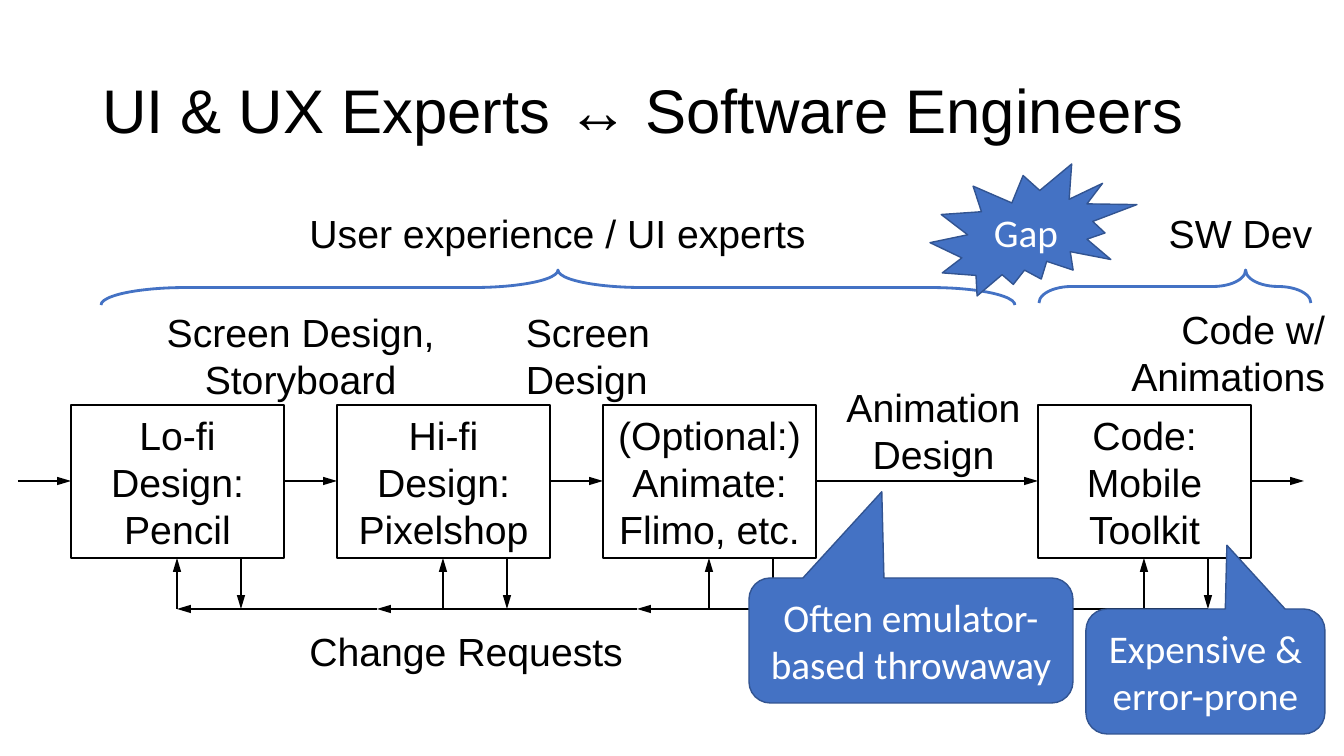
from dataclasses import dataclass

from pptx import Presentation
from pptx.dml.color import RGBColor
from pptx.enum.shapes import MSO_CONNECTOR, MSO_SHAPE
from pptx.enum.text import MSO_ANCHOR, MSO_AUTO_SIZE, PP_ALIGN
from pptx.oxml.ns import qn
from pptx.util import Emu, Pt
from lxml.etree import SubElement


@dataclass(frozen=True)
class Theme:
    ink: str = "000000"
    paper: str = "FFFFFF"
    accent: str = "4472C4"
    accent_edge: str = "325491"
    font: str = "Arial"
    callout_font: str = "Calibri"
    title_size: int = 44
    text_size: int = 28
    edge: float = 1
    arrow: float = 1.5
    brace: float = 2


THEME = Theme()
SLIDE_WIDTH, SLIDE_HEIGHT = 1344, 756
EMU_PER_PX = 12192000 / SLIDE_WIDTH


def px(length):
    return Emu(round(length * EMU_PER_PX))


def set_all(target, values):
    for name, value in values.items():
        setattr(target, name, value)


def write(shape, text, color=THEME.ink, font=THEME.font, size=THEME.text_size,
          align=PP_ALIGN.CENTER, **frame_format):
    frame = shape.text_frame
    set_all(frame, {"word_wrap": True, **frame_format})
    paragraph = frame.paragraphs[0]
    paragraph.text = text
    paragraph.alignment = align
    set_all(paragraph.font, {"name": font, "size": Pt(size)})
    paragraph.font.color.rgb = RGBColor.from_string(color)
    return paragraph


def outline(shape, color, width):
    shape.line.color.rgb = RGBColor.from_string(color)
    shape.line.width = Pt(width)


def add_shape(slide, kind, box, fill, edge, width=THEME.edge, adjustments=()):
    shape = slide.shapes.add_shape(kind, *map(px, box))
    shape.shadow.inherit = False
    if fill:
        shape.fill.solid()
        shape.fill.fore_color.rgb = RGBColor.from_string(fill)
    else:
        shape.fill.background()
    outline(shape, edge, width)
    for index, value in enumerate(adjustments):
        shape.adjustments[index] = value
    return shape


def add_arrow(slide, start, end):
    connector = slide.shapes.add_connector(
        MSO_CONNECTOR.STRAIGHT, *map(px, (*start, *end)))
    outline(connector, THEME.ink, THEME.arrow)
    properties = connector._element.spPr
    SubElement(properties.find(qn("a:ln")), qn("a:tailEnd"),
               type="triangle", w="med", len="lg")
    SubElement(properties, qn("a:effectLst"))


def add_label(slide, text, box, align=PP_ALIGN.CENTER):
    label = slide.shapes.add_textbox(*map(px, box))
    write(label, text, align=align, word_wrap=False,
          auto_size=MSO_AUTO_SIZE.SHAPE_TO_FIT_TEXT)


def add_title(slide, text, box):
    title = slide.shapes.title
    places = map(px, box)
    set_all(title, dict(zip(("left", "top", "width", "height"), places)))
    paragraph = write(title, text, size=THEME.title_size, align=PP_ALIGN.LEFT,
                      vertical_anchor=MSO_ANCHOR.MIDDLE)
    paragraph.line_spacing = 0.9


def add_process(slide, box, steps, run_in, bus_drop):
    """Step boxes joined by arrows, with change requests running back below."""
    left, top, width, height = box
    middle, bottom = top + height // 2, top + height
    bus = bottom + bus_drop
    lefts = [left + offset for _, offset in steps]
    for (text, _), step_left in zip(steps, lefts):
        step = add_shape(slide, MSO_SHAPE.RECTANGLE,
                         (step_left, top, width, height), THEME.paper, THEME.ink)
        write(step, text, vertical_anchor=MSO_ANCHOR.MIDDLE)
        request_in, request_out = step_left + width // 2, step_left + width * 4 // 5
        add_arrow(slide, (request_in, bus), (request_in, bottom))
        add_arrow(slide, (request_out, bottom), (request_out, bus))

    starts = [left - run_in] + [x + width for x in lefts]
    ends = lefts + [lefts[-1] + width + run_in]
    for start, end in zip(starts, ends):
        add_arrow(slide, (start, middle), (end, middle))

    stops = [lefts[-1] + width * 4 // 5, 897, 637, 377, left + width // 2]
    for start, end in zip(stops, stops[1:]):
        add_arrow(slide, (start, bus), (end, bus))


def add_team(slide, text, label_box, brace_box, tip):
    """A team name above a brace that opens downwards."""
    left, top, width, height = brace_box
    upright = (left + (width - height) / 2, top + (height - width) / 2,
               height, width)
    brace = add_shape(slide, MSO_SHAPE.RIGHT_BRACE, upright, None,
                      THEME.accent, THEME.brace, (2.43, tip))
    brace.rotation = 270
    add_label(slide, text, label_box)


def add_remark(slide, kind, text, box, adjustments=()):
    remark = add_shape(slide, kind, box, THEME.accent, THEME.accent_edge,
                       adjustments=adjustments)
    write(remark, text, color=THEME.paper, font=THEME.callout_font,
          vertical_anchor=MSO_ANCHOR.MIDDLE)


def build_gap_slide(presentation):
    slide = presentation.slides.add_slide(presentation.slide_layouts[5])
    add_title(slide, "UI & UX Experts ↔ Software Engineers", (92, 41, 1159, 146))

    steps = [("Lo-fi\vDesign:\vPencil", 0),
             ("Hi-fi\vDesign:\vPixelshop", 266),
             ("(Optional:)\vAnimate:\vFlimo, etc.", 532),
             ("Code:\vMobile\vToolkit", 967)]
    add_process(slide, (71, 405, 213, 153), steps, run_in=53, bus_drop=51)

    add_label(slide, "Change Requests", (297, 622, 338, 57))
    add_label(slide, "Screen Design,\vStoryboard", (150, 303, 301, 105))
    add_label(slide, "Screen\vDesign", (516, 303, 157, 105), PP_ALIGN.LEFT)
    add_label(slide, "Animation\vDesign", (835, 378, 197, 105))
    add_label(slide, "Code w/\vAnimations", (1118, 300, 217, 105), PP_ALIGN.RIGHT)

    add_team(slide, "User experience / UI experts", (233, 204, 649, 57),
             (101, 270, 914, 35), 0.5)
    add_team(slide, "SW Dev", (1137, 204, 207, 57), (1039, 270, 272, 33), 0.76)

    add_remark(slide, MSO_SHAPE.EXPLOSION2, "Gap", (930, 164, 207, 132))
    callout = MSO_SHAPE.ROUNDED_RECTANGULAR_CALLOUT
    add_remark(slide, callout, "Often emulator-based throwaway",
               (749, 578, 324, 125), (-0.09, -1.19, 0.17))
    add_remark(slide, callout, "Expensive & error-prone",
               (1086, 609, 239, 125), (0.09, -1.01, 0.17))


def main():
    presentation = Presentation()
    set_all(presentation, {"slide_width": px(SLIDE_WIDTH),
                           "slide_height": px(SLIDE_HEIGHT)})
    build_gap_slide(presentation)
    presentation.save("out.pptx")


if __name__ == "__main__":
    main()
